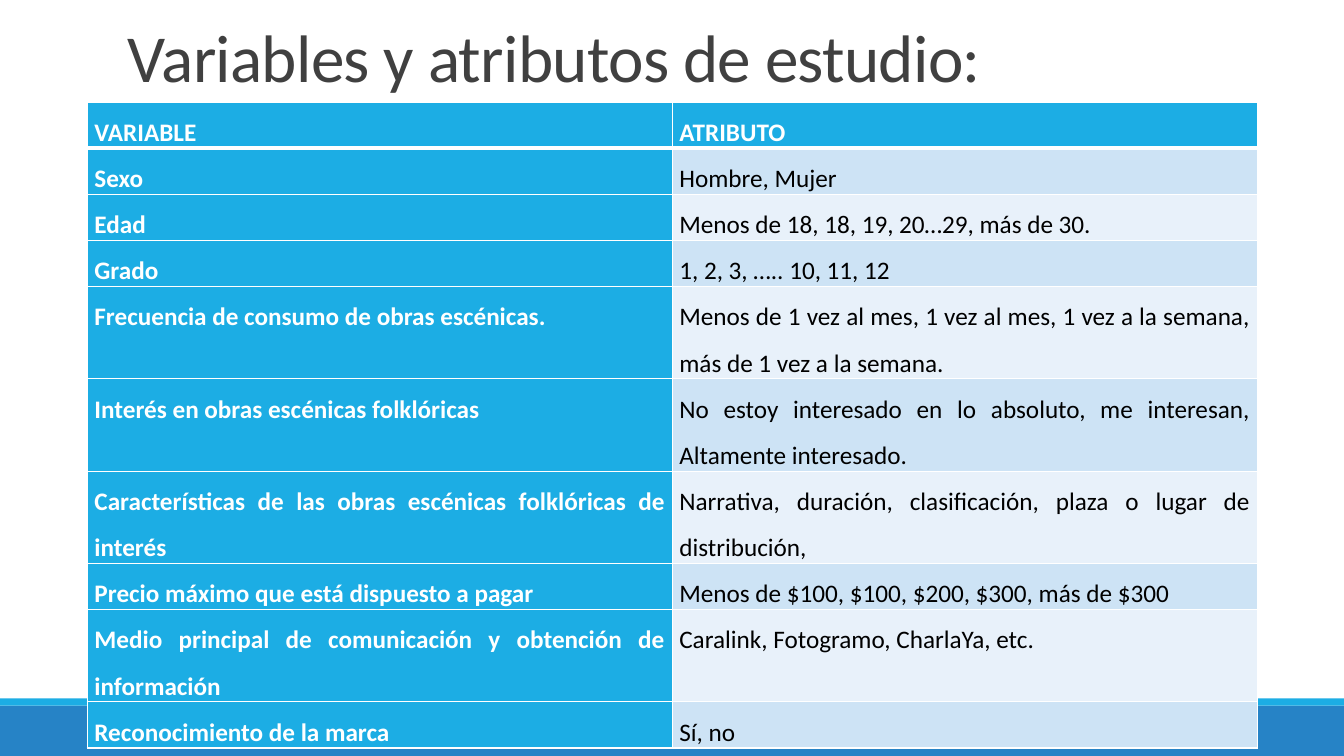
from dataclasses import dataclass

from lxml import etree
from pptx import Presentation, util as u
from pptx.dml.color import RGBColor
from pptx.enum import shapes, text
from pptx.oxml import ns


@dataclass(frozen=True)
class Theme:
    font: str = "Calibri"
    title_size: int = 48
    cell_size: int = 18
    heading: str = "404040"
    accent: str = "1CADE4"
    footer: str = "2683C6"
    light: str = "FFFFFF"
    dark: str = "000000"
    bands: tuple = ("CDE3F5", "E8F1FA")


def apply(target, values):
    for name, value in values.items():
        setattr(target, name, value)


class StudySlide:
    def __init__(self, deck, theme):
        self.theme = theme
        self.slide = deck.slides.add_slide(deck.slide_layouts[5])

    def style(self, run, size, color, bold=False):
        apply(run.font, {"name": self.theme.font, "size": u.Pt(size), "bold": bold})
        run.font.color.rgb = RGBColor.from_string(color)

    def title(self, wording, left, top, width, height):
        heading = self.slide.shapes.title
        apply(heading, {"left": u.Cm(left), "top": u.Cm(top),
                        "width": u.Cm(width), "height": u.Cm(height)})
        apply(heading.text_frame, {"text": wording, "word_wrap": True,
                                   "auto_size": text.MSO_AUTO_SIZE.NONE,
                                   "vertical_anchor": text.MSO_ANCHOR.BOTTOM})
        line = heading.text_frame.paragraphs[0]
        apply(line, {"alignment": text.PP_ALIGN.LEFT, "line_spacing": 0.85})
        self.style(line.runs[0], self.theme.title_size, self.theme.heading)
        line.runs[0]._r.get_or_add_rPr().set("spc", "-50")

    def band(self, color, top, height, width):
        strip = self.slide.shapes.add_shape(
            shapes.MSO_SHAPE.RECTANGLE, 0, u.Cm(top), width, u.Cm(height))
        strip.shadow.inherit = False
        strip.fill.solid()
        strip.fill.fore_color.rgb = RGBColor.from_string(color)
        strip.line.fill.background()

    def borders(self, cell, widths):
        properties = cell._tc.get_or_add_tcPr()
        for side, points in widths.items():
            edge = etree.SubElement(properties, ns.qn(f"a:ln{side}"), w=str(u.Pt(points)))
            fill = etree.SubElement(edge, ns.qn("a:solidFill"))
            etree.SubElement(fill, ns.qn("a:srgbClr"), val=self.theme.light)

    def cell(self, cell, wording, fill, color, bold, widths):
        self.borders(cell, widths)
        cell.fill.solid()
        cell.fill.fore_color.rgb = RGBColor.from_string(fill)
        apply(cell, {"text": wording, "margin_left": u.Cm(0.18), "margin_right": u.Cm(0.18),
                     "margin_top": 0, "margin_bottom": 0})
        line = cell.text_frame.paragraphs[0]
        apply(line, {"alignment": text.PP_ALIGN.JUSTIFY, "line_spacing": 1.5})
        self.style(line.runs[0], self.theme.cell_size, color, bold)

    def table(self, entries, left, top, width, line_height):
        theme = self.theme
        frame = self.slide.shapes.add_table(
            len(entries), 2, u.Cm(left), u.Cm(top), u.Cm(width),
            u.Cm(line_height * sum(lines for _, _, lines in entries)))
        grid = frame.table
        for row, (variable, attribute, lines) in enumerate(entries):
            grid.rows[row].height = u.Cm(line_height * lines)
            header = row == 0
            widths = {"L": 1, "R": 1, "T": 3 if row == 1 else 1, "B": 3 if header else 1}
            self.cell(grid.cell(row, 0), variable, theme.accent, theme.light, True, widths)
            self.cell(grid.cell(row, 1), attribute,
                      theme.accent if header else theme.bands[(row - 1) % 2],
                      theme.light if header else theme.dark, header, widths)


VARIABLES = [
    ("VARIABLE", "ATRIBUTO", 1),
    ("Sexo", "Hombre, Mujer", 1),
    ("Edad", "Menos de 18, 18, 19, 20…29, más de 30.", 1),
    ("Grado", "1, 2, 3, ….. 10, 11, 12", 1),
    ("Frecuencia de consumo de obras escénicas.",
     "Menos de 1 vez al mes, 1 vez al mes, 1 vez a la semana, más de 1 vez a la semana.", 2),
    ("Interés en obras escénicas folklóricas",
     "No estoy interesado en lo absoluto, me interesan, Altamente interesado.", 2),
    ("Características de las obras escénicas folklóricas de interés",
     "Narrativa, duración, clasificación, plaza o lugar de distribución, ", 2),
    ("Precio máximo que está dispuesto a pagar",
     "Menos de $100, $100, $200, $300, más de $300", 1),
    ("Medio principal de comunicación y obtención de información",
     "Caralink, Fotogramo, CharlaYa, etc.", 2),
    ("Reconocimiento de la marca", "Sí, no", 1),
]


def main():
    deck = Presentation()
    apply(deck, {"slide_width": u.Cm(33.87), "slide_height": u.Cm(19.05)})
    theme = Theme()
    study = StudySlide(deck, theme)
    study.band(theme.footer, 17.78, 1.27, deck.slide_width)
    study.band(theme.accent, 17.6, 0.18, deck.slide_width)
    study.title("Variables y atributos de estudio:", 2.97, 0.38, 27.94, 2.16)
    study.table(VARIABLES, 2.2, 2.57, 29.48, 1.16)
    deck.save("out.pptx")


if __name__ == "__main__":
    main()
